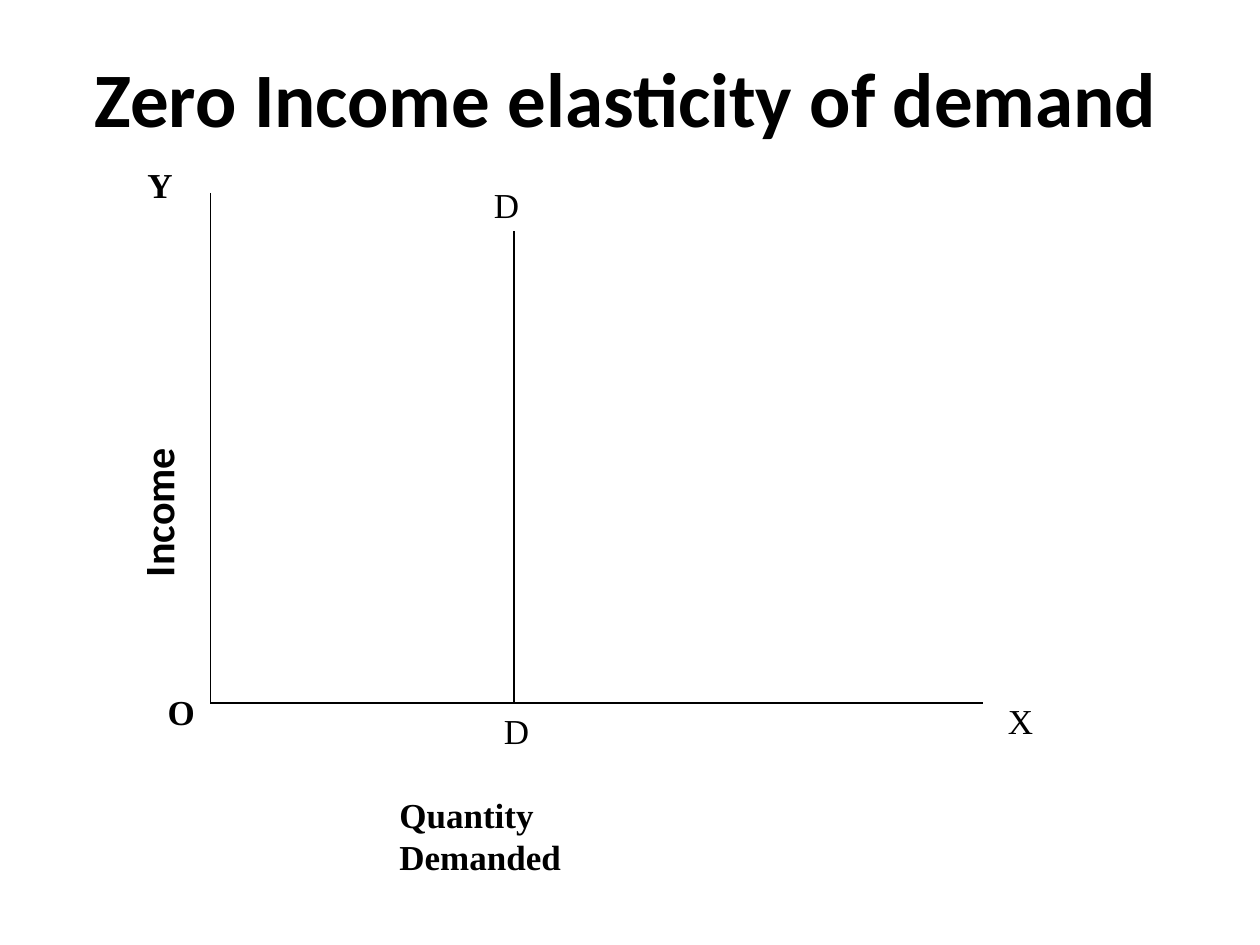
from pptx import Presentation
from pptx.dml.color import RGBColor
from pptx.enum.shapes import MSO_CONNECTOR
from pptx.oxml.ns import qn
from pptx.util import Inches, Pt
from lxml import etree

STRAIGHT = MSO_CONNECTOR.STRAIGHT
SERIF = "Times New Roman"
SANS = "Calibri"
BLACK = "000000"


def paint(code):
    """Turn a hex string into a colour."""
    return RGBColor.from_string(code)


def add_text(slide, box, text, size=20, font=SERIF, bold=False, wrap=False):
    """Place one paragraph in a box and return its frame."""
    frame = slide.shapes.add_textbox(*map(Inches, box)).text_frame
    frame.margin_left = frame.margin_right = frame.margin_bottom = 0
    frame.margin_top = Inches(0.01)
    frame.word_wrap = wrap
    para = frame.paragraphs[0]
    para.text = text
    para.font.size = Pt(size)
    para.font.name = font
    para.font.bold = bold
    para.font.color.rgb = paint(BLACK)
    return frame


def add_line(slide, start, end):
    """Draw a thin straight line without a shadow."""
    line = slide.shapes.add_connector(STRAIGHT, *map(Inches, start + end))
    line.line.color.rgb = paint(BLACK)
    line.line.width = Pt(0.75)
    etree.SubElement(line._element.spPr, qn("a:effectLst"))


def add_title(slide, box):
    """Place the slide title."""
    add_text(slide, box, "Zero Income elasticity of demand", 44, SANS, True)


def add_side(slide, box):
    """Place the upward-reading name of the income axis."""
    frame = add_text(slide, box, "Income", 24, SANS, True)
    frame.margin_top = 0
    frame.paragraphs[0].line_spacing = Pt(23.8)
    frame._txBody.bodyPr.set("vert", "vert270")


def add_graph(slide, box):
    """Draw the axes, the demand line and their labels in a box."""
    left, top, width, height = box
    right, base = left + width, top + height
    demand = left + 2.41
    add_line(slide, (left, top), (left, base))
    add_line(slide, (left, base), (right, base))
    add_line(slide, (demand, base), (demand, top + 0.3))

    marks = [
        ("Y", left - 0.5, top - 0.24, True),
        ("X", right + 0.2, base - 0.04, False),
        ("O", left - 0.34, base - 0.11, True),
        ("D", demand - 0.08, base + 0.04, False),
        ("D", demand - 0.16, top - 0.08, False),
    ]
    for text, x, y, bold in marks:
        add_text(slide, (x, y, 0.23, 0.36), text, bold=bold)

    add_text(slide, (left + 1.5, base + 0.71, 1.6, 0.7),
             "Quantity Demanded", bold=True, wrap=True)
    add_side(slide, (left - 0.55, top + 2, 0.36, 1.05))


def main():
    """Build and save the slide."""
    deck = Presentation()
    deck.slide_width, deck.slide_height = Inches(10), Inches(7.5)
    slide = deck.slides.add_slide(deck.slide_layouts[6])
    add_title(slide, (0.75, 0.39, 8.49, 0.76))
    add_graph(slide, (1.67, 1.53, 6.13, 4.05))
    deck.save("out.pptx")


if __name__ == "__main__":
    main()
